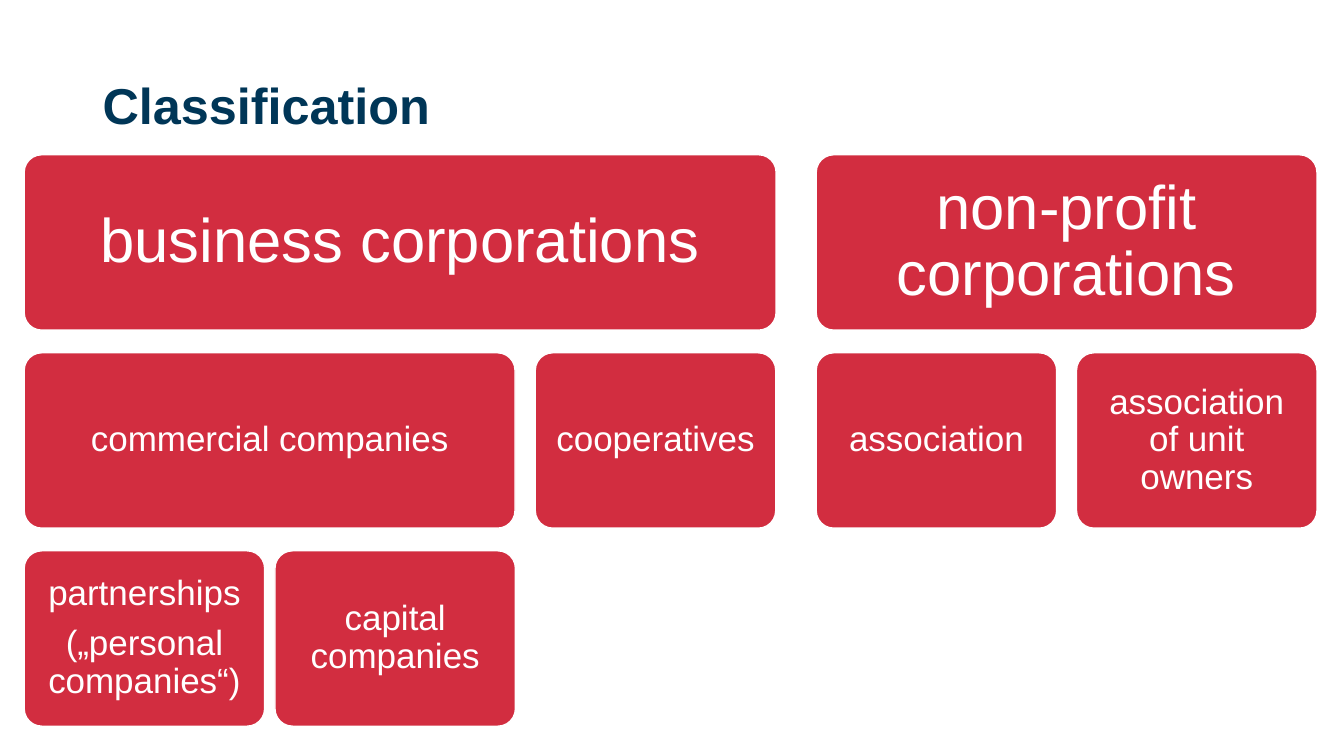
"""Build the slide that classifies corporations as a three-level hierarchy."""
import pptx
import pptx.util
import pptx.dml.color
import pptx.enum.shapes
import pptx.enum.text

Cm, Pt = pptx.util.Cm, pptx.util.Pt
RGBColor = pptx.dml.color.RGBColor
PP_ALIGN, MSO_ANCHOR = pptx.enum.text.PP_ALIGN, pptx.enum.text.MSO_ANCHOR

NAVY = RGBColor(0x00, 0x36, 0x57)
RED = RGBColor(0xD2, 0x2D, 0x40)
WHITE = RGBColor(0xFF, 0xFF, 0xFF)

TOP, ROW_STEP, BOX_H = 3.9, 4.99, 4.42
LEVELS = [
    {"size": 44, "inset": 0.46},
    {"size": 25, "inset": 0.25},
    {"size": 25, "inset": 0.25},
]
BOXES = [
    (0, 0.61, 18.95, ["business corporations"]),
    (1, 0.61, 12.37, ["commercial companies"]),
    (2, 0.61, 6.06, ["partnerships", "(„personal companies“)"]),
    (2, 6.93, 6.06, ["capital companies"]),
    (1, 13.49, 6.06, ["cooperatives"]),
    (0, 20.57, 12.62, ["non-profit corporations"]),
    (1, 20.57, 6.06, ["association"]),
    (1, 27.13, 6.06, ["association of unit owners"]),
]


def set_font(r, size, color, bold=False):
    for name, value in {"name": "Arial", "size": Pt(size), "bold": bold}.items():
        setattr(r.font, name, value)
    r.font.color.rgb = color


prs = pptx.Presentation()
prs.slide_width, prs.slide_height = Cm(33.87), Cm(19.05)
s = prs.slides.add_slide(prs.slide_layouts[5])

title = s.shapes.title
for name, value in {"left": 2.33, "top": 0.76, "width": 29.21, "height": 2.75}.items():
    setattr(title, name, Cm(value))
tf = title.text_frame
tf.auto_size = pptx.enum.text.MSO_AUTO_SIZE.NONE
tf.vertical_anchor = MSO_ANCHOR.BOTTOM
p = tf.paragraphs[0]
p.alignment = PP_ALIGN.LEFT
r = p.add_run()
r.text = "Classification"
set_font(r, 36, NAVY, True)

for level, left, width, lines in BOXES:
    size, inset = LEVELS[level]["size"], LEVELS[level]["inset"]
    sp = s.shapes.add_shape(
        pptx.enum.shapes.MSO_SHAPE.ROUNDED_RECTANGLE,
        Cm(left), Cm(TOP + level * ROW_STEP), Cm(width), Cm(BOX_H))
    sp.adjustments[0] = 0.1
    sp.shadow.inherit = False
    sp.fill.solid()
    sp.fill.fore_color.rgb = RED
    sp.line.color.rgb = WHITE
    sp.line.width = Pt(1)
    tf = sp.text_frame
    tf.word_wrap = True
    tf.vertical_anchor = MSO_ANCHOR.MIDDLE
    for side in ("left", "top", "right", "bottom"):
        setattr(tf, f"margin_{side}", Cm(inset))
    for i, line in enumerate(lines):
        p = tf.add_paragraph() if i else tf.paragraphs[0]
        p.alignment = PP_ALIGN.CENTER
        p.line_spacing = 0.9
        p.space_before = Pt(0.35 * size if i else 0)
        r = p.add_run()
        r.text = line
        set_font(r, size, WHITE)

prs.save("out.pptx")
